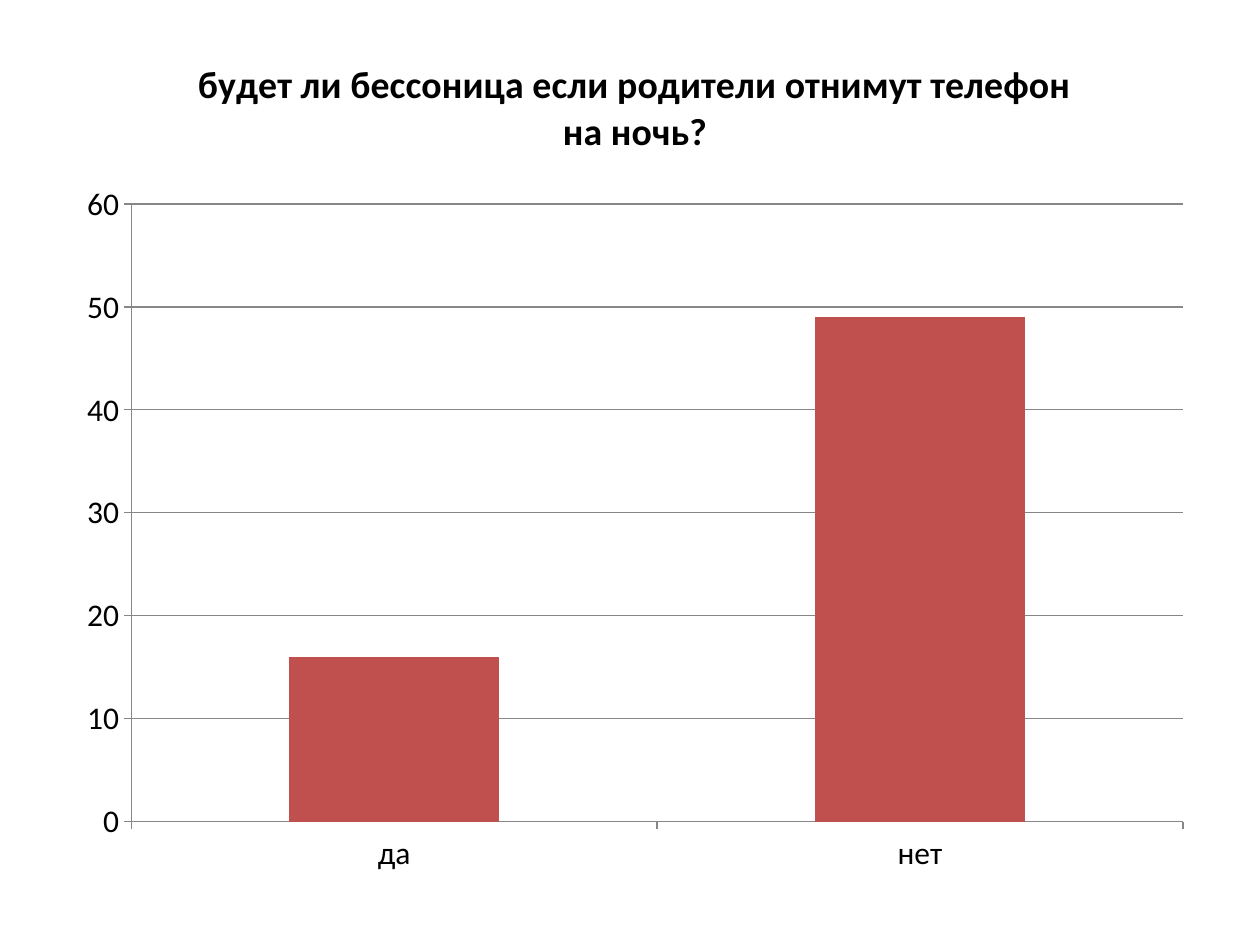
from pptx import Presentation
from pptx.chart.data import CategoryChartData
from pptx.dml.color import RGBColor
from pptx.enum.chart import XL_CHART_TYPE, XL_TICK_MARK
from pptx.util import Inches, Pt

COLORS = {"text": "000000", "bar": "C0504D", "line": "878787"}
QUESTION = "будет ли бессоница если родители отнимут телефон на ночь?"
ANSWERS = {"да": 16, "нет": 49}


def write_text(frame, text, size=18, bold=False, color="text", name="Calibri"):
    span = frame.paragraphs[0].add_run()
    span.text = text
    span.font.size = Pt(size)
    span.font.bold = bold
    span.font.name = name
    span.font.color.rgb = RGBColor.from_string(COLORS[color])


def style_line(line):
    line.width = Pt(0.75)
    line.color.rgb = RGBColor.from_string(COLORS["line"])


# Slide
deck = Presentation()
deck.slide_width, deck.slide_height = Inches(10), Inches(7.5)
page = deck.slides.add_slide(deck.slide_layouts[6])

# Column chart
answers_data = CategoryChartData()
answers_data.categories = list(ANSWERS)
answers_data.add_series(QUESTION, list(ANSWERS.values()))
chart = page.shapes.add_chart(
    XL_CHART_TYPE.COLUMN_STACKED,
    Inches(0.51), Inches(0.21), Inches(9.06), Inches(6.85),
    answers_data,
).chart
chart.has_legend = False
chart.font.name = "Calibri"
chart.font.size = Pt(18)
chart.font.color.rgb = RGBColor.from_string(COLORS["text"])

# Chart title
chart.has_title = True
chart.chart_title.include_in_layout = False
write_text(chart.chart_title.text_frame, QUESTION, size=21.6, bold=True)

# Columns
plot = chart.plots[0]
plot.vary_by_categories = False
plot.gap_width, plot.overlap = 150, 100
bars = plot.series[0].format.fill
bars.solid()
bars.fore_color.rgb = RGBColor.from_string(COLORS["bar"])

# Axes and gridlines
for axis in (chart.category_axis, chart.value_axis):
    axis.major_tick_mark = XL_TICK_MARK.OUTSIDE
    axis.minor_tick_mark = XL_TICK_MARK.NONE
    style_line(axis.format.line)
values = chart.value_axis
values.minimum_scale, values.maximum_scale, values.major_unit = 0, 60, 10
values.has_major_gridlines = True
style_line(values.major_gridlines.format.line)

deck.save("out.pptx")
